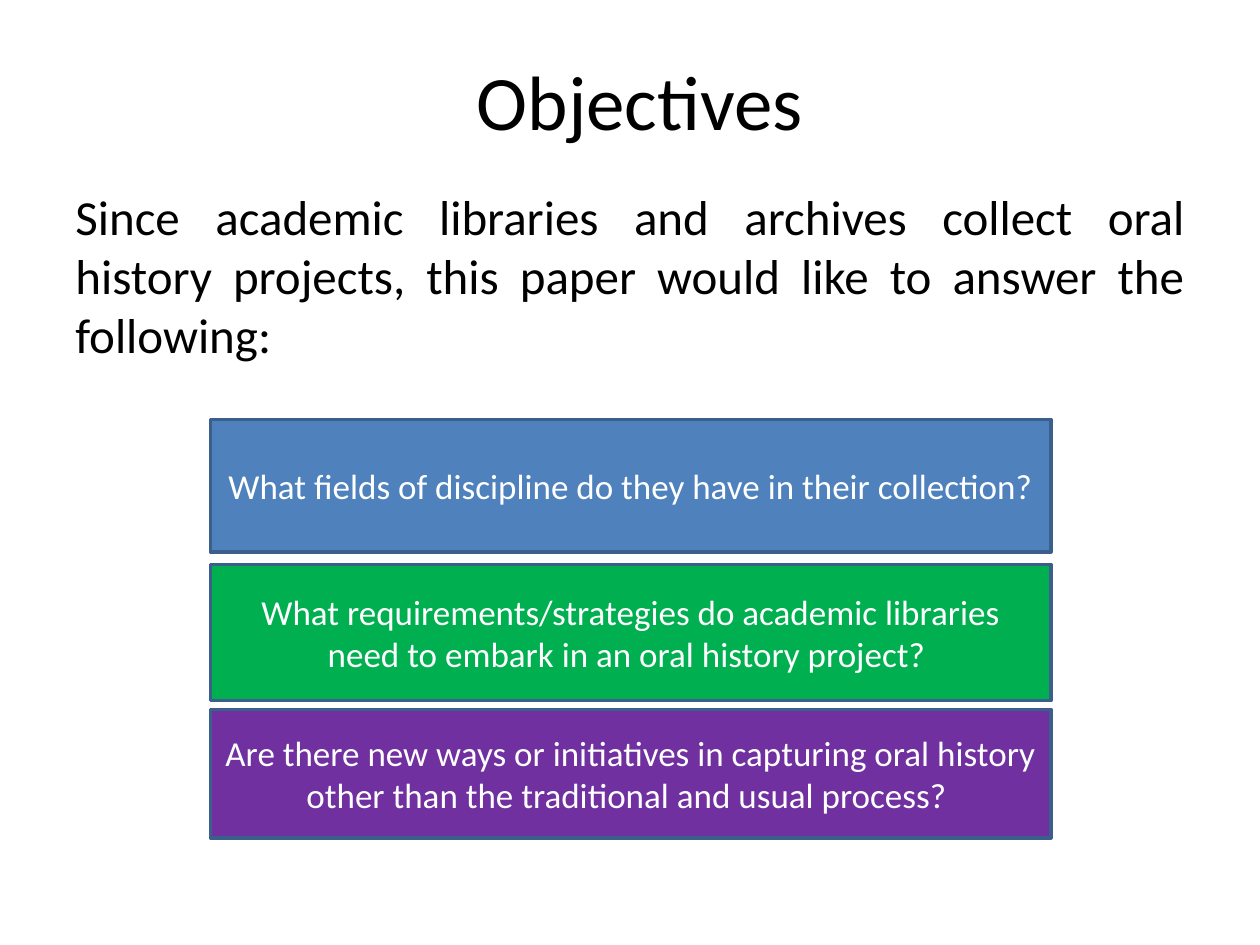
from dataclasses import dataclass

from pptx import Presentation
from pptx.dml.color import RGBColor
from pptx.enum.shapes import MSO_SHAPE
from pptx.enum.text import MSO_ANCHOR, PP_ALIGN
from pptx.slide import Slide
from pptx.text.text import TextFrame
from pptx.util import Inches, Pt

BLACK = RGBColor(0x00, 0x00, 0x00)
WHITE = RGBColor(0xFF, 0xFF, 0xFF)
BLUE = RGBColor(0x4F, 0x81, 0xBD)
GREEN = RGBColor(0x00, 0xB0, 0x50)
PURPLE = RGBColor(0x70, 0x30, 0xA0)
BORDER = RGBColor(0x3A, 0x5F, 0x8C)

QUESTION_LEFT, QUESTION_WIDTH = 1.67, 6.67


@dataclass
class Question:
    text: str
    top: float
    height: float
    fill: RGBColor


QUESTIONS = [
    Question("What fields of discipline do they have in their collection?",
             3.33, 1.05, BLUE),
    Question("What requirements/strategies do academic libraries need to "
             "embark in an oral history project? ", 4.48, 1.08, GREEN),
    Question("Are there new ways or initiatives in capturing oral history "
             "other than the traditional and usual process? ",
             5.63, 1.02, PURPLE),
]


def write_text(frame: TextFrame, text: str, size: float, color: RGBColor,
               align: PP_ALIGN, anchor: MSO_ANCHOR) -> None:
    frame.word_wrap = True
    frame.vertical_anchor = anchor
    paragraph = frame.paragraphs[0]
    paragraph.text = text
    paragraph.alignment = align
    paragraph.font.name = "Calibri"
    paragraph.font.size = Pt(size)
    paragraph.font.color.rgb = color


def add_question(slide: Slide, question: Question) -> None:
    box = slide.shapes.add_shape(
        MSO_SHAPE.RECTANGLE, Inches(QUESTION_LEFT), Inches(question.top),
        Inches(QUESTION_WIDTH), Inches(question.height))
    box.shadow.inherit = False
    box.fill.solid()
    box.fill.fore_color.rgb = question.fill
    box.line.color.rgb = BORDER
    box.line.width = Pt(2)
    write_text(box.text_frame, question.text, 20, WHITE,
               PP_ALIGN.CENTER, MSO_ANCHOR.MIDDLE)


def main() -> None:
    presentation = Presentation()
    presentation.slide_width = Inches(10)
    presentation.slide_height = Inches(7.5)
    slide = presentation.slides.add_slide(presentation.slide_layouts[5])

    # Title
    title = slide.shapes.title
    title.left, title.top = Inches(0.58), Inches(0.17)
    title.width, title.height = Inches(9), Inches(1.25)
    write_text(title.text_frame, "Objectives", 44, BLACK,
               PP_ALIGN.CENTER, MSO_ANCHOR.MIDDLE)

    # Introduction
    introduction = slide.shapes.add_textbox(
        Inches(0.5), Inches(1.43), Inches(9), Inches(4.95))
    write_text(introduction.text_frame,
               "Since academic libraries and archives collect oral history "
               "projects, this paper would like to answer the following:",
               28, BLACK, PP_ALIGN.JUSTIFY, MSO_ANCHOR.TOP)
    introduction.text_frame.paragraphs[0].space_before = Pt(5.6)

    # Research questions
    for question in QUESTIONS:
        add_question(slide, question)

    presentation.save("out.pptx")


if __name__ == "__main__":
    main()
